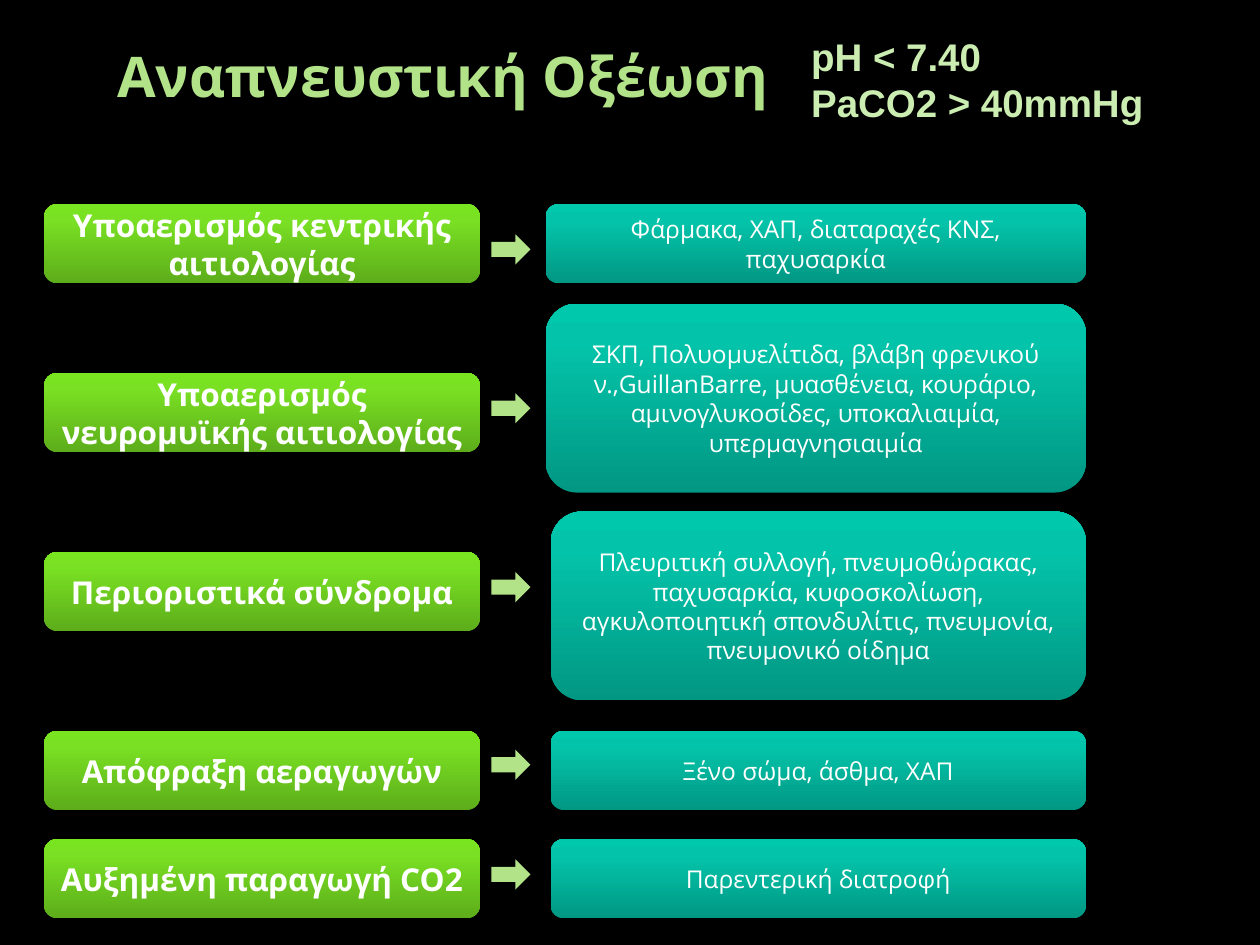
"""Builds the slide on the causes of respiratory acidosis."""
from copy import deepcopy
from dataclasses import dataclass

from pptx import Presentation
from pptx.dml.color import RGBColor
from pptx.enum.shapes import MSO_SHAPE
from pptx.enum.text import MSO_ANCHOR, MSO_AUTO_SIZE, PP_ALIGN
from pptx.oxml.ns import qn
from pptx.util import Inches, Pt

ROUND = MSO_SHAPE.ROUNDED_RECTANGLE
ARROW = MSO_SHAPE.RIGHT_ARROW
TOP, MIDDLE = MSO_ANCHOR.TOP, MSO_ANCHOR.MIDDLE
LEFT, CENTER = PP_ALIGN.LEFT, PP_ALIGN.CENTER
NO_FIT = MSO_AUTO_SIZE.NONE
COLS, ROWS = 100, 75


@dataclass(frozen=True)
class Theme:
    """Colours, fonts and type sizes."""
    back: str = "000000"
    text: str = "FFFFFF"
    accent: str = "B2E389"
    pale: str = "CCEDB1"
    green: tuple = ((0, "5DAD1B"), (0.8, "79E023"), (1, "79E520"))
    teal: tuple = ((0, "029783"), (0.8, "03C4AA"), (1, "00C8AD"))
    main: str = "Open Sans"
    plain: str = "Arial"
    head: int = 32
    note: int = 22
    cause: int = 18
    effect: int = 14


class Deck:
    """Holds the theme and the current slide, and draws on its grid."""

    def __init__(self, theme):
        """Start a file with one slide."""
        self.theme = theme
        self.prs = Presentation()
        self.prs.slide_width, self.prs.slide_height = Inches(10), Inches(7.5)
        self.slide = self.prs.slides.add_slide(self.prs.slide_layouts[5])
        fill = self.slide.background.fill
        fill.solid()
        fill.fore_color.rgb = RGBColor.from_string(theme.back)

    def place(self, col, row, wide, high):
        """Turn grid columns and rows into lengths."""
        x, y = self.prs.slide_width / COLS, self.prs.slide_height / ROWS
        return round(col * x), round(row * y), round(wide * x), round(high * y)

    def label(self, shape, text, size, color, face, bold, align, anchor):
        """Fill a shape with paragraphs of one style."""
        frame = shape.text_frame
        frame.text = text
        frame.word_wrap = True
        frame.auto_size = NO_FIT
        frame.vertical_anchor = anchor
        for para in frame.paragraphs:
            para.alignment = align
            font = para.font
            font.name, font.size, font.bold = face, Pt(size), bold
            font.color.rgb = RGBColor.from_string(color)

    def title(self, text, *area):
        """Move and format the title placeholder."""
        shape, look = self.slide.shapes.title, self.theme
        shape.left, shape.top, shape.width, shape.height = self.place(*area)
        self.label(shape, text, look.head, look.accent, look.main, True, LEFT, TOP)

    def note(self, text, *area):
        """Add a bold text box."""
        shape, look = self.slide.shapes.add_textbox(*self.place(*area)), self.theme
        self.label(shape, text, look.note, look.pale, look.plain, True, LEFT, TOP)

    def shape(self, kind, *area):
        """Add a preset shape without line or shadow."""
        shape = self.slide.shapes.add_shape(kind, *self.place(*area))
        shape.shadow.inherit = False
        shape.line.fill.background()
        return shape

    def box(self, text, stops, size, bold, *area):
        """Add a rounded box with an upward gradient."""
        shape, look = self.shape(ROUND, *area), self.theme
        fill = shape.fill
        fill.gradient()
        fill.gradient_angle = 90
        marks = shape.element.spPr.find(qn("a:gradFill")).find(qn("a:gsLst"))
        marks.append(deepcopy(marks[-1]))
        for mark, (place, color) in zip(fill.gradient_stops, stops):
            mark.position = place
            mark.color.rgb = RGBColor.from_string(color)
        self.label(shape, text, size, look.text, look.main, bold, CENTER, MIDDLE)

    def arrow(self, *area):
        """Add a block arrow."""
        fill = self.shape(ARROW, *area).fill
        fill.solid()
        fill.fore_color.rgb = RGBColor.from_string(self.theme.accent)


LOW, TALL, EDGE = 6.3, 15, 86.2
PAIRS = (
    (16.2, 18.6, "Υποαερισμός κεντρικής αιτιολογίας", 43.3, 16.2, LOW,
     "Φάρμακα, ΧΑΠ, διαταραχές ΚΝΣ, παχυσαρκία"),
    (29.6, 31.2, "Υποαερισμός νευρομυϊκής αιτιολογίας", 43.3, 24.1, TALL,
     "ΣΚΠ, Πολυομυελίτιδα, βλάβη φρενικού ν.,GuillanBarre, μυασθένεια, "
     "κουράριο, αμινογλυκοσίδες, υποκαλιαιμία, υπερμαγνησιαιμία"),
    (43.8, 45.4, "Περιοριστικά σύνδρομα", 43.7, 40.6, TALL,
     "Πλευριτική συλλογή, πνευμοθώρακας, παχυσαρκία, κυφοσκολίωση, "
     "αγκυλοποιητική σπονδυλίτις, πνευμονία, πνευμονικό οίδημα"),
    (58, 59.5, "Απόφραξη αεραγωγών", 43.7, 58, LOW, "Ξένο σώμα, άσθμα, ΧΑΠ"),
    (66.6, 68.2, "Αυξημένη παραγωγή CO2", 43.7, 66.6, LOW,
     "Παρεντερική διατροφή"),
)


def main():
    """Draw the heading and the five pairs."""
    look = Theme()
    deck = Deck(look)
    deck.title("Αναπνευστική Οξέωση", 8.3, 2.8, 71.7, 6.4)
    deck.note("pH < 7.40\nPaCO2 > 40mmHg", 63.4, 2.1, 30.7, 8.4)
    for row, tip, cause, col, top, high, effect in PAIRS:
        deck.box(cause, look.green, look.cause, True, 3.5, row, 34.6, LOW)
        deck.box(effect, look.teal, look.effect, False, col, top, EDGE - col, high)
        deck.arrow(39, tip, 3.1, 2.4)
    deck.prs.save("out.pptx")


if __name__ == "__main__":
    main()
